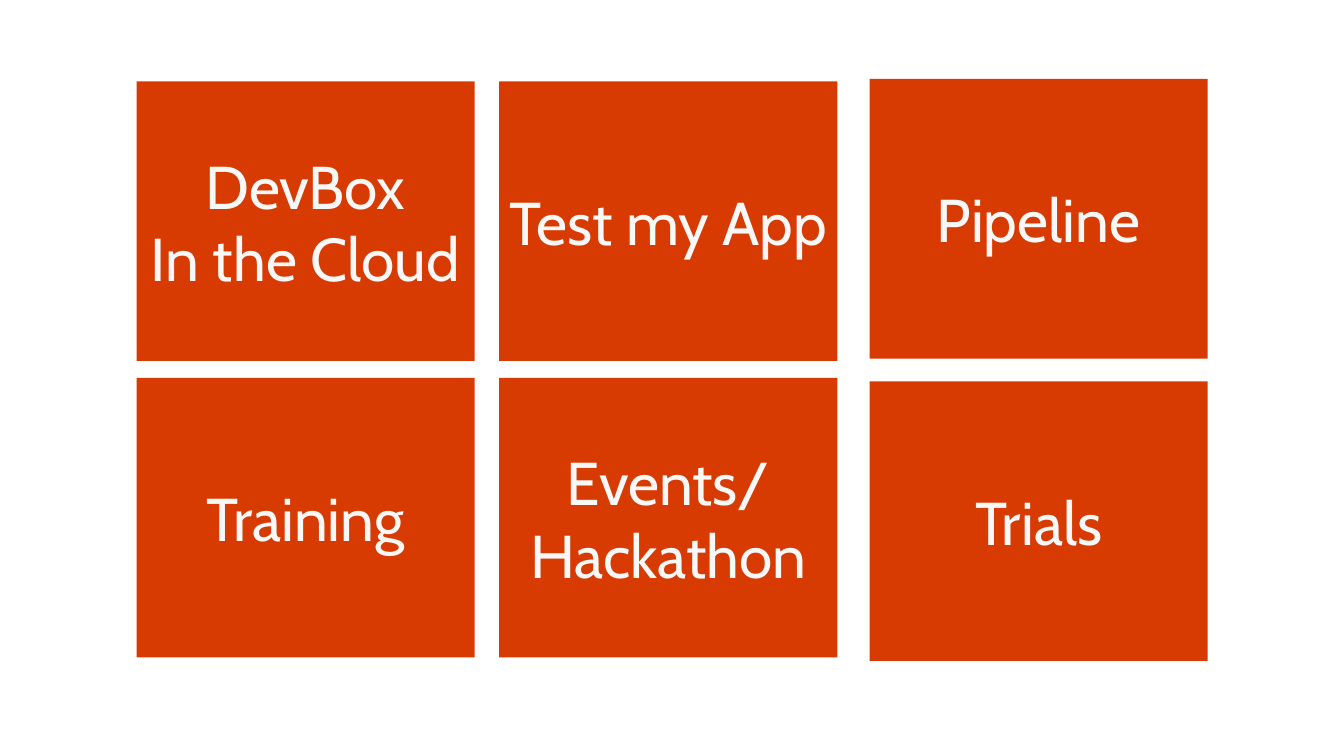
import pptx
import pptx.util
import pptx.dml.color
import pptx.enum.shapes
import pptx.enum.text
from pptx.util import Cm

RGB = pptx.dml.color.RGBColor.from_string
THEME = {
    "background": RGB("FFFFFF"),
    "tile": RGB("D83B01"),
    "font": {"name": "Cabin", "size": pptx.util.Pt(44), "color": RGB("F8F8F8")},
}
FRAME = {
    "margin_left": 0,
    "margin_right": 0,
    "margin_top": Cm(0.13),
    "margin_bottom": Cm(0.13),
    "word_wrap": True,
    "vertical_anchor": pptx.enum.text.MSO_ANCHOR.MIDDLE,
}

# Slide
prs = pptx.Presentation()
prs.slide_width, prs.slide_height = Cm(34.54), Cm(19.43)
s = prs.slides.add_slide(prs.slide_layouts[6])
s.background.fill.solid()
s.background.fill.fore_color.rgb = THEME["background"]

# Tile columns: left edge, then top edge and lines of each tile
tile_w, tile_h = Cm(8.69), Cm(7.19)
columns = [
    (3.51, [(2.09, ["DevBox", "In the Cloud"]), (9.71, ["Training"])]),
    (12.83, [(2.09, ["Test my App"]), (9.71, ["Events/", "Hackathon"])]),
    (22.35, [(2.03, ["Pipeline"]), (9.8, ["Trials"])]),
]

# Tiles
for left, tiles in columns:
    for top, lines in tiles:
        sp = s.shapes.add_shape(pptx.enum.shapes.MSO_SHAPE.RECTANGLE,
                                Cm(left), Cm(top), tile_w, tile_h)
        sp.shadow.inherit = False
        sp.fill.solid()
        sp.fill.fore_color.rgb = THEME["tile"]
        sp.line.fill.background()
        tf = sp.text_frame
        for key, value in FRAME.items():
            setattr(tf, key, value)

        # One centred paragraph per line
        for i, line in enumerate(lines):
            p = tf.add_paragraph() if i else tf.paragraphs[0]
            p.alignment = pptx.enum.text.PP_ALIGN.CENTER
            r = p.add_run()
            r.text = line
            r.font.name = THEME["font"]["name"]
            r.font.size = THEME["font"]["size"]
            r.font.color.rgb = THEME["font"]["color"]

prs.save("out.pptx")
